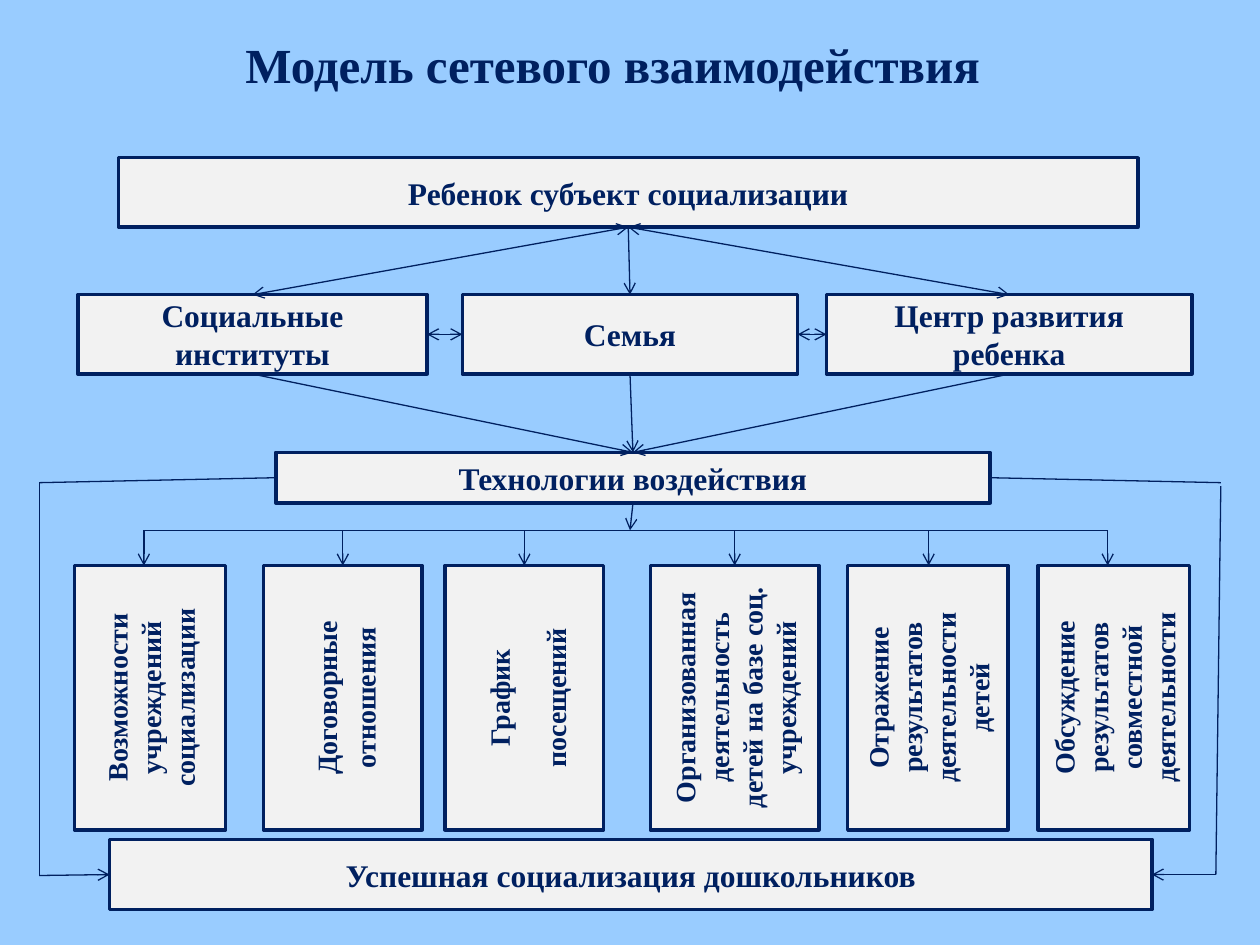
from itertools import pairwise

from lxml.etree import SubElement
from pptx import Presentation
from pptx.dml.color import RGBColor
from pptx.enum.shapes import MSO_CONNECTOR as Connector, MSO_SHAPE as Shape
from pptx.enum.text import MSO_ANCHOR as Anchor, MSO_AUTO_SIZE as AutoSize, PP_ALIGN as Align
from pptx.oxml.ns import qn
from pptx.util import Cm, Pt

SKY = RGBColor(0x99, 0xCC, 0xFF)
NAVY = RGBColor(0x00, 0x20, 0x60)
PALE = RGBColor(0xF2, 0xF2, 0xF2)
FONT = "Times New Roman"

# Connection sites of a rectangle
TOP, LEFT, BOTTOM, RIGHT = range(4)


class Diagram:
    """Holds the slide and the common look of its elements."""

    def __init__(self, slide):
        self.slide = slide
        self.shapes = slide.shapes
        slide.background.fill.solid()
        slide.background.fill.fore_color.rgb = SKY

    def set_text(self, frame, text, size, line_spacing=None, space_after=0):
        frame.word_wrap = True
        frame.text = text
        for paragraph in frame.paragraphs:
            paragraph.alignment = Align.CENTER
            paragraph.line_spacing = line_spacing
            paragraph.space_after = Pt(space_after)
            font = paragraph.font
            font.name, font.size, font.bold = FONT, Pt(size), True
            font.color.rgb = NAVY

    def title(self, text, x, y, width, height):
        label = self.shapes.add_textbox(Cm(x), Cm(y), Cm(width), Cm(height))
        self.set_text(label.text_frame, text, 28)
        label.text_frame.auto_size = AutoSize.SHAPE_TO_FIT_TEXT

    def box(self, text, x, y, width, height, size=18, **spacing):
        block = self.shapes.add_shape(Shape.RECTANGLE, Cm(x), Cm(y), Cm(width), Cm(height))
        block.shadow.inherit = False
        block.fill.solid()
        block.fill.fore_color.rgb = PALE
        block.line.color.rgb = NAVY
        block.line.width = Pt(2)
        block.text_frame.vertical_anchor = Anchor.MIDDLE
        self.set_text(block.text_frame, text, size, **spacing)
        return block

    def upright_box(self, text, x, y, width, height, **spacing):
        block = self.box(text, x, y, width, height, size=16, **spacing)
        block.text_frame._txBody.bodyPr.set("vert", "vert270")
        return block

    def line(self, start=(0, 0), end=(0, 0), head=False, tail=False):
        link = self.shapes.add_connector(Connector.STRAIGHT, *map(Cm, (*start, *end)))
        link.line.color.rgb = NAVY
        link.line.width = Pt(0.75)
        outline = link.line._get_or_add_ln()
        for tag, wanted in (("a:headEnd", head), ("a:tailEnd", tail)):
            if wanted:
                SubElement(outline, qn(tag), type="arrow")
        SubElement(link._element.spPr, qn("a:effectLst"))
        return link

    def join(self, first, first_site, second, second_site, both=False):
        link = self.line(head=both, tail=True)
        link.begin_connect(first, first_site)
        link.end_connect(second, second_site)

    def route(self, *points):
        """Straight pieces through the points, with an arrow on the last."""
        for start, end in pairwise(points):
            self.line(start, end, tail=end == points[-1])


def main():
    deck = Presentation()
    deck.slide_width, deck.slide_height = Cm(25.4), Cm(19.05)
    diagram = Diagram(deck.slides.add_slide(deck.slide_layouts[6]))

    diagram.title("Модель сетевого взаимодействия", 0.6, 0.58, 23.5, 1.45)

    # Child, partners and technologies
    child = diagram.box("Ребенок субъект социализации", 2.39, 3.18, 20.55, 1.4)
    institutes, family, centre = partners = [
        diagram.box(text, x, 5.94, width, 1.6)
        for text, x, width in (
            ("Социальные институты", 1.57, 7.04),
            ("Семья", 9.32, 6.76),
            ("Центр развития ребенка", 16.66, 7.37),
        )
    ]
    technologies = diagram.box("Технологии воздействия", 5.56, 9.12, 14.4, 1.02)

    for partner in partners:
        diagram.join(child, BOTTOM, partner, TOP, both=partner is not family)
        diagram.join(partner, BOTTOM, technologies, TOP)
    for left, right in pairwise(partners):
        diagram.join(left, RIGHT, right, LEFT, both=True)

    # Kinds of work: text, left edge, width, arrow position, spacing
    loose = {"line_spacing": 1.15, "space_after": 10}
    works = (
        ("Возможности учреждений социализации", 1.5, 3.05, 2.9, {"space_after": 10}),
        ("Договорные отношения", 5.31, 3.2, 6.91, loose),
        ("График\nпосещений", 8.97, 3.2, 10.57, loose),
        ("Организованная деятельность детей на базе соц. учреждений", 13.11, 3.4, 14.81, {}),
        ("Отражение результатов деятельности\nдетей", 17.09, 3.23, 18.72, {}),
        ("Обсуждение результатов совместной деятельности", 20.93, 3.05, 22.33, {}),
    )
    rail, works_top = 10.69, 11.4
    for text, x, width, arrow_x, spacing in works:
        diagram.upright_box(text, x, works_top, width, 5.33, **spacing)
        diagram.line((arrow_x, rail), (arrow_x, works_top), tail=True)
    diagram.line((works[0][3], rail), (works[-1][3], rail))
    diagram.line((12.76, 10.14), (12.7, rail), tail=True)

    # Result, reached around both sides
    diagram.box("Успешная социализация дошкольников", 2.21, 16.92, 21.01, 1.42)
    diagram.route((5.56, 9.63), (0.79, 9.73), (0.79, 17.65), (2.21, 17.63))
    diagram.line((19.96, 9.63), (24.61, 9.73))
    diagram.route((24.61, 9.8), (24.51, 17.63), (23.22, 17.63))

    deck.save("out.pptx")


if __name__ == "__main__":
    main()
